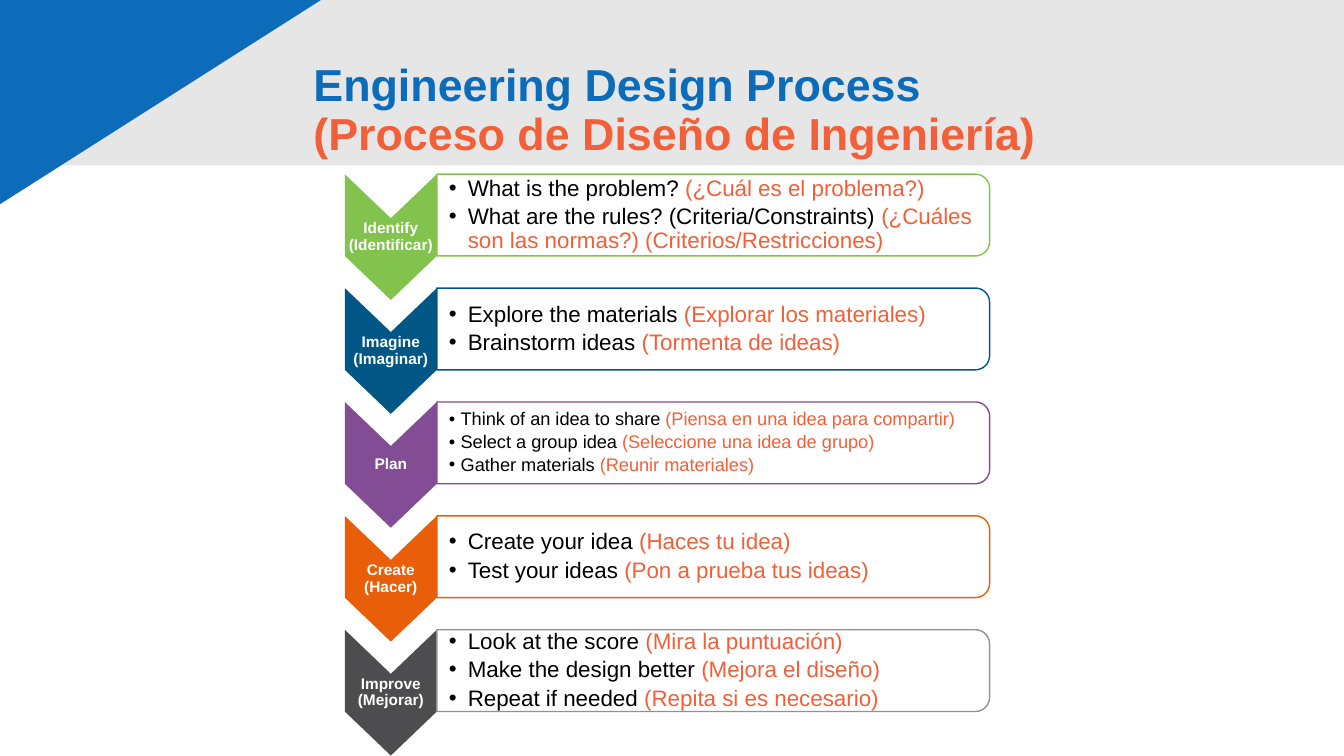
"""Build the bilingual Engineering Design Process slide."""
from dataclasses import dataclass
from math import cos, pi, sin

from lxml import etree
from pptx import Presentation
from pptx import util as u
from pptx.dml import color
from pptx.enum import shapes, text
from pptx.oxml import ns


@dataclass(frozen=True)
class Theme:
    font: str = "Arial"
    blue: str = "0D6CB9"
    spanish: str = "F16038"
    band: str = "E7E6E6"
    white: str = "FFFFFF"
    black: str = "000000"
    green: str = "82C34D"
    navy: str = "005786"
    purple: str = "824D94"
    orange: str = "E95E09"
    charcoal: str = "4D4D4F"
    grey: str = "919191"
    title_size: float = 32
    label_size: float = 11
    body_size: float = 16
    small_size: float = 13


theme = Theme()


def write(para, words, size, tint, bold=False):
    span = para.add_run()
    span.text = words
    span.font.name = theme.font
    span.font.size = u.Pt(size)
    span.font.bold = bold
    span.font.color.rgb = color.RGBColor.from_string(tint)


def draw_outline(page, points, fill, line=None):
    corners = [(u.Cm(x), u.Cm(y)) for x, y in points]
    builder = page.shapes.build_freeform(*corners[0])
    builder.add_line_segments(corners[1:], close=True)
    shape = builder.convert_to_shape()
    shape.shadow.inherit = False
    shape.fill.solid()
    shape.fill.fore_color.rgb = color.RGBColor.from_string(fill)
    if line:
        shape.line.color.rgb = color.RGBColor.from_string(line)
        shape.line.width = u.Pt(1)
    else:
        shape.line.fill.background()
    shape.text_frame.word_wrap = True
    shape.text_frame.vertical_anchor = text.MSO_ANCHOR.MIDDLE
    return shape


deck = Presentation()
deck.slide_width, deck.slide_height = u.Cm(33.87), u.Cm(19.05)
page = deck.slides.add_slide(deck.slide_layouts[6])

backdrop = [
    (shapes.MSO_SHAPE.RECTANGLE, (-0.66, -0.48, 34.53, 4.65), theme.band),
    (shapes.MSO_SHAPE.RIGHT_TRIANGLE, (-6.53, -4.37, 21.49, 13.67), theme.blue),
]
for preset, place, fill in backdrop:
    shape = page.shapes.add_shape(preset, *map(u.Cm, place))
    shape.shadow.inherit = False
    shape.fill.solid()
    shape.fill.fore_color.rgb = color.RGBColor.from_string(fill)
    shape.line.fill.background()
shape.rotation = 180
shape._element.spPr.xfrm.set("flipH", "1")

title = page.shapes.add_textbox(u.Cm(7.65), u.Cm(0.97), u.Cm(24.64), u.Cm(3.68))
title.text_frame.word_wrap = True
title.text_frame.vertical_anchor = text.MSO_ANCHOR.MIDDLE
para = title.text_frame.paragraphs[0]
para.line_spacing = 0.9
write(para, "Engineering Design Process", theme.title_size, theme.blue, bold=True)
para.add_line_break()
write(para, "(Proceso de Diseño de Ingeniería)", theme.title_size, theme.spanish, bold=True)

steps = [
    ("Identify (Identificar)", theme.green, theme.green, theme.body_size, [
        ("What is the problem? ", "(¿Cuál es el problema?)"),
        ("What are the rules? (Criteria/Constraints) ",
         "(¿Cuáles son las normas?) (Criterios/Restricciones)")]),
    ("Imagine (Imaginar)", theme.navy, theme.navy, theme.body_size, [
        ("Explore the materials ", "(Explorar los materiales)"),
        ("Brainstorm ideas ", "(Tormenta de ideas)")]),
    ("Plan", theme.purple, theme.purple, theme.small_size, [
        ("Think of an idea to share ", "(Piensa en una idea para compartir)"),
        ("Select a group idea ", "(Seleccione una idea de grupo)"),
        ("Gather materials ", "(Reunir materiales)")]),
    ("Create (Hacer)", theme.orange, theme.orange, theme.body_size, [
        ("Create your idea ", "(Haces tu idea)"),
        ("Test your ideas ", "(Pon a prueba tus ideas)")]),
    ("Improve (Mejorar)", theme.charcoal, theme.grey, theme.body_size, [
        ("Look at the score ", "(Mira la puntuación)"),
        ("Make the design better ", "(Mejora el diseño)"),
        ("Repeat if needed ", "(Repita si es necesario)")]),
]
first_top, pitch = 4.39, 2.87
left, seam, right = 8.69, 11.01, 24.94
middle = (left + seam) / 2
side, notch, radius = 2.06, 1.11, 0.36
arc = [pi / 2 * i / 12 for i in range(13)]

for row, (label, fill, line, size, points) in enumerate(steps):
    top = first_top + row * pitch
    bottom = top + side

    chevron = draw_outline(page, [
        (left, top), (middle, top + notch), (seam, top),
        (seam, bottom), (middle, bottom + notch), (left, bottom)], fill)
    frame = chevron.text_frame
    frame.margin_left = frame.margin_right = u.Cm(0.02)
    frame.margin_top = frame.margin_bottom = u.Cm(1.19)
    para = frame.paragraphs[0]
    para.alignment = text.PP_ALIGN.CENTER
    para.line_spacing = 0.9
    write(para, label, theme.label_size, theme.white, bold=True)

    centre = right - radius
    upper = [(centre + radius * sin(a), top + radius * (1 - cos(a))) for a in arc]
    lower = [(centre + radius * cos(a), bottom - radius * (1 - sin(a))) for a in arc]
    panel = draw_outline(
        page, [(seam, top), *upper, *lower, (seam, bottom)], theme.white, line)
    tint = panel._element.spPr.find(ns.qn("a:solidFill"))[0]
    etree.SubElement(tint, ns.qn("a:alpha"), val="90000")
    frame = panel.text_frame
    frame.margin_left = u.Cm(0.3)
    frame.margin_right = frame.margin_top = frame.margin_bottom = u.Cm(0.13)
    hang = u.Cm(0.48 if size == theme.body_size else 0.3)
    for index, (english, spanish) in enumerate(points):
        para = frame.add_paragraph() if index else frame.paragraphs[0]
        para.level = 1
        para.alignment = text.PP_ALIGN.LEFT
        para.line_spacing = 0.9
        para.space_after = u.Pt(round(size * 0.18, 1))
        layout = para._p.get_or_add_pPr()
        layout.set("marL", str(hang))
        layout.set("indent", str(-hang))
        etree.SubElement(layout, ns.qn("a:buFont"), typeface=theme.font)
        etree.SubElement(layout, ns.qn("a:buChar"), char="•")
        write(para, english, size, theme.black)
        write(para, spanish, size, theme.spanish)

deck.save("out.pptx")
